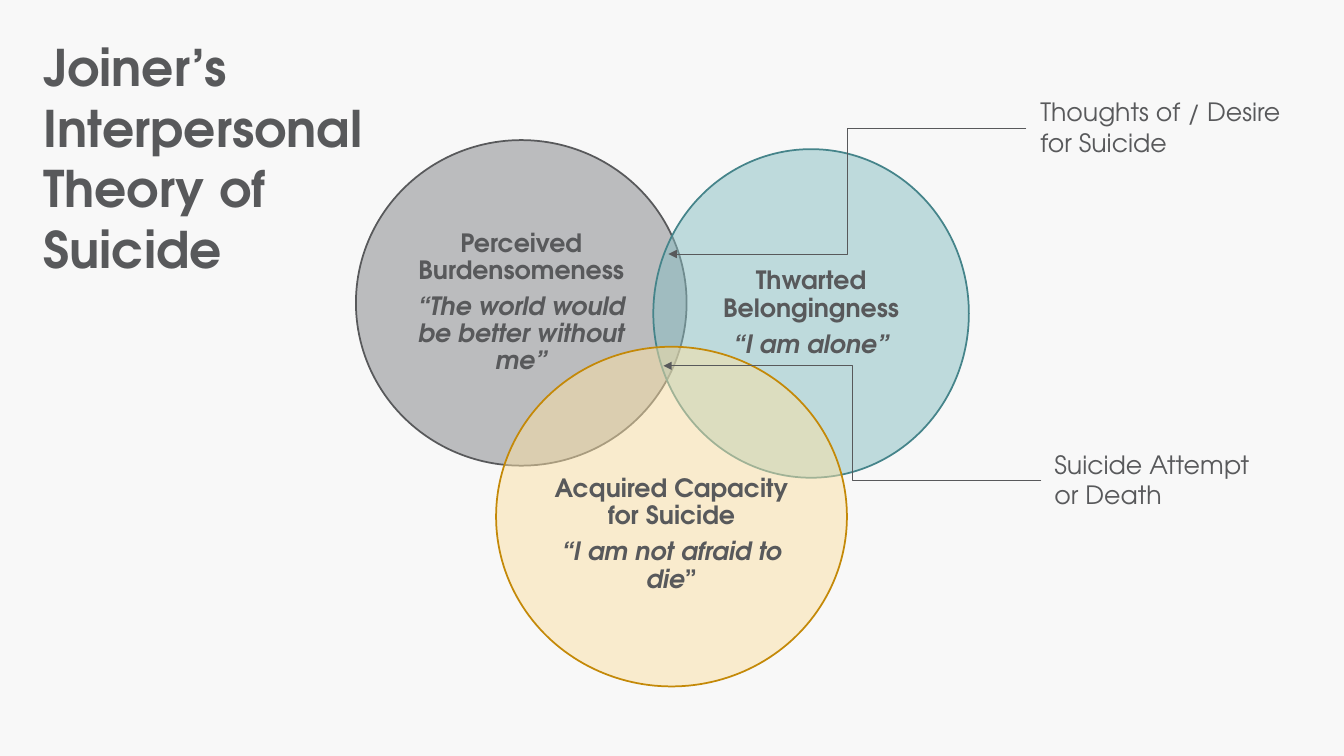
from dataclasses import dataclass

from lxml import etree
from pptx import Presentation
from pptx.dml.color import RGBColor
from pptx.enum import shapes, text
from pptx.oxml.ns import qn
from pptx.util import Inches, Pt


@dataclass(frozen=True)
class Theme:
    """Colours, type sizes and line widths of the slide."""
    font: str = "TeX Gyre Adventor"
    paper: str = "F8F8F8"
    ink: str = "58595B"
    grey: str = "808285"
    teal: str = "86BDC2"
    teal_line: str = "45848A"
    sand: str = "FBE0A3"
    sand_line: str = "C48908"
    title: int = 36
    body: int = 18
    outline: float = 1.25
    hairline: float = 0.75


T = Theme()


def set_all(obj, **values):
    """Set attributes of an object from format values."""
    for name, value in values.items():
        setattr(obj, name, value)


def add_run(p, words, size=T.body, bold=False, italic=False):
    """Add a run in the slide's typeface."""
    r = p.add_run()
    r.text = words
    set_all(r.font, name=T.font, size=Pt(size), bold=bold, italic=italic)
    r.font.color.rgb = RGBColor.from_string(T.ink)


def add_label(s, box, words, **style):
    """Add a wrapped, left-aligned text box."""
    tf = s.shapes.add_textbox(*map(Inches, box)).text_frame
    tf.word_wrap = True
    add_run(tf.paragraphs[0], words, **style)


def add_circle(s, box, fill, line, factor, quote, drop=0):
    """Add a half-transparent circle holding a factor and its quote."""
    sp = s.shapes.add_shape(shapes.MSO_SHAPE.OVAL, *map(Inches, box))
    sp.shadow.inherit = False
    sp.fill.solid()
    sp.fill.fore_color.rgb = RGBColor.from_string(fill)
    colour = sp._element.spPr.find(qn("a:solidFill"))[0]
    etree.SubElement(colour, qn("a:alpha"), val="50000")
    sp.line.color.rgb = RGBColor.from_string(line)
    sp.line.width = Pt(T.outline)
    tf = sp.text_frame
    inset = Inches(0.07)
    set_all(tf, word_wrap=True, vertical_anchor=text.MSO_ANCHOR.MIDDLE,
            margin_left=inset, margin_right=inset, margin_bottom=inset,
            margin_top=inset + Inches(drop))
    heading, saying = tf.paragraphs[0], tf.add_paragraph()
    for p in (heading, saying):
        set_all(p, alignment=text.PP_ALIGN.CENTER, line_spacing=0.9,
                space_after=Pt(6.3))
    add_run(heading, factor, bold=True)
    add_run(saying, quote[:-1], bold=True, italic=True)
    add_run(saying, quote[-1], bold=True, italic=not drop)


def add_pointer(s, start, end):
    """Add an elbow arrow from a label to an overlap."""
    c = s.shapes.add_connector(shapes.MSO_CONNECTOR.ELBOW,
                               *map(Inches, start + end))
    c.line.color.rgb = RGBColor.from_string(T.ink)
    c.line.width = Pt(T.hairline)
    etree.SubElement(c.line._get_or_add_ln(), qn("a:tailEnd"), type="triangle")
    etree.SubElement(c._element.spPr, qn("a:effectLst"))


def main():
    """Build and save the slide."""
    prs = Presentation()
    set_all(prs, slide_width=Inches(13.33), slide_height=Inches(7.5))
    s = prs.slides.add_slide(prs.slide_layouts[6])
    s.background.fill.solid()
    s.background.fill.fore_color.rgb = RGBColor.from_string(T.paper)

    add_circle(s, (3.53, 1.39, 3.28, 3.23), T.grey, T.ink,
               "Perceived Burdensomeness",
               "“The world would be better without me”")
    add_circle(s, (6.48, 1.48, 3.13, 3.26), T.teal, T.teal_line,
               "Thwarted Belongingness", "“I am alone”")
    add_circle(s, (4.92, 3.44, 3.48, 3.37), T.sand, T.sand_line,
               "Acquired Capacity for Suicide", "“I am not afraid to die”",
               drop=0.36)

    add_pointer(s, (10.18, 1.27), (6.63, 2.52))
    add_pointer(s, (10.33, 4.77), (6.58, 3.63))
    add_label(s, (10.22, 0.91, 2.92, 0.71), "Thoughts of / Desire for Suicide")
    add_label(s, (10.36, 4.41, 2.43, 0.71), "Suicide Attempt or Death")
    add_label(s, (0.33, 0.31, 3.45, 2.52),
              "Joiner’s Interpersonal Theory of Suicide",
              size=T.title, bold=True)
    prs.save("out.pptx")


if __name__ == "__main__":
    main()
